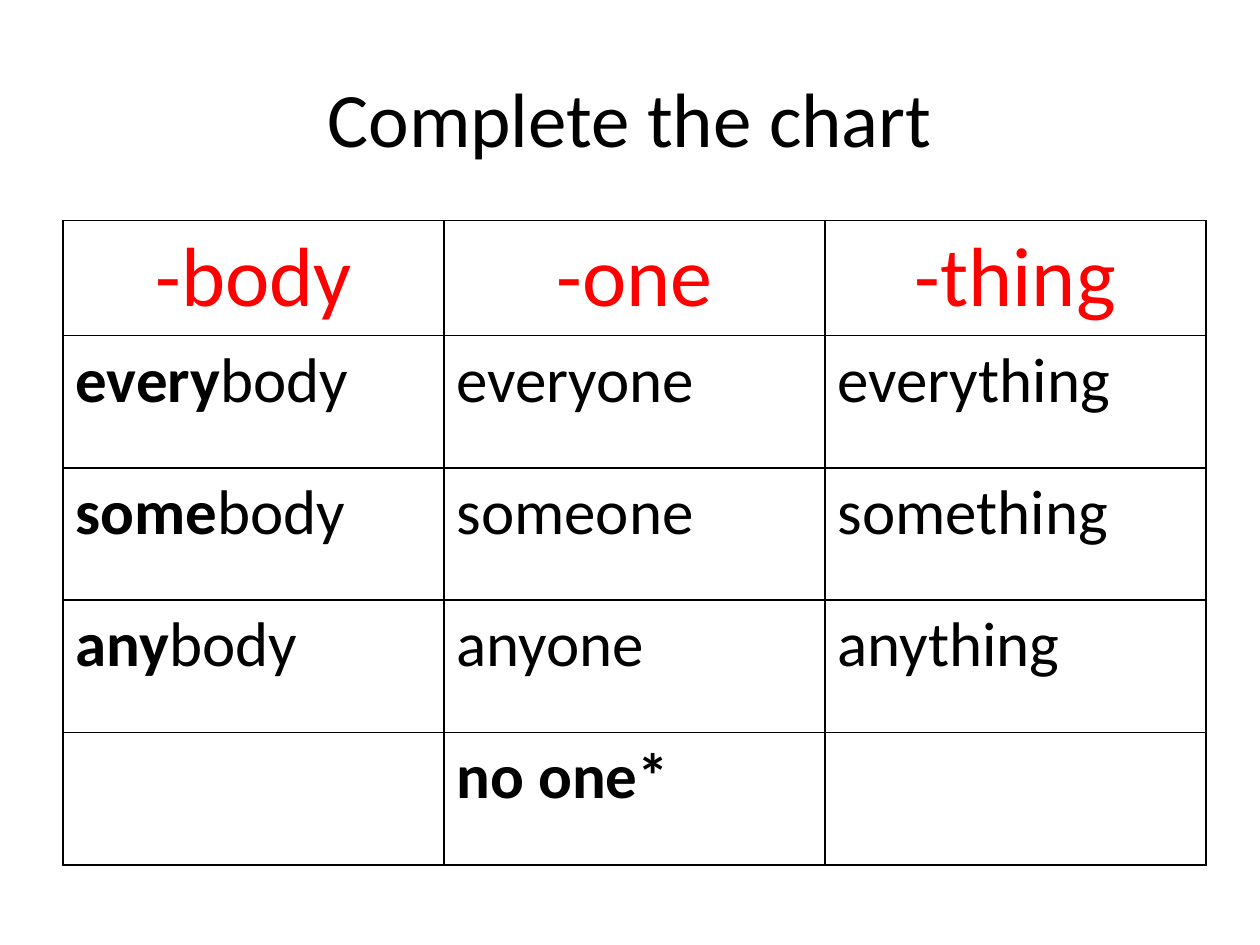
import pptx
import pptx.util
import pptx.dml.color
import pptx.enum.text
import pptx.oxml
import pptx.oxml.ns
from lxml import etree
from pptx.util import Inches

BLACK = pptx.dml.color.RGBColor(0, 0, 0)
RED = pptx.dml.color.RGBColor(255, 0, 0)
FONT = "Calibri"
CENTER = pptx.enum.text.PP_ALIGN.CENTER

HEADERS = ["-body", "-one", "-thing"]
# Each cell is a pair: bold beginning, regular ending
ROWS = [
    [("every", "body"), ("", "everyone"), ("", "everything")],
    [("some", "body"), ("", "someone"), ("", "something")],
    [("any", "body"), ("", "anyone"), ("", "anything")],
    [("", ""), ("no one*", ""), ("", "")],
]


def format_run(r, size, color, bold=False):
    r.font.name = FONT
    r.font.size = pptx.util.Pt(size)
    r.font.color.rgb = color
    r.font.bold = bold


def set_borders(cell):
    """Draw a thin black line on all four sides, under a clear fill."""
    tc_pr = cell._tc.get_or_add_tcPr()
    for side in ("a:lnL", "a:lnR", "a:lnT", "a:lnB"):
        ln = etree.SubElement(tc_pr, pptx.oxml.ns.qn(side), w=str(pptx.util.Pt(1)))
        fill = etree.SubElement(ln, pptx.oxml.ns.qn("a:solidFill"))
        etree.SubElement(fill, pptx.oxml.ns.qn("a:srgbClr"), val=str(BLACK))
    cell.fill.background()


def add_title(s, text, left, top, width, height):
    sp = s.shapes.title
    sp.left, sp.top, sp.width, sp.height = left, top, width, height
    tf = sp.text_frame
    tf.text = text
    tf.vertical_anchor = pptx.enum.text.MSO_ANCHOR.MIDDLE
    p = tf.paragraphs[0]
    p.alignment = CENTER
    format_run(p.runs[0], 44, BLACK)


def add_word_table(s, left, top, width, height, header_height):
    frame = s.shapes.add_table(len(ROWS) + 1, len(HEADERS), left, top, width, height)
    table = frame.table
    table.first_row = table.horz_banding = False

    # Header row, then equal rows below it
    table.rows[0].height = header_height
    for i in range(1, len(ROWS) + 1):
        table.rows[i].height = (height - header_height) // len(ROWS)
    for cell in table.iter_cells():
        set_borders(cell)

    # Endings
    for col, text in enumerate(HEADERS):
        p = table.cell(0, col).text_frame.paragraphs[0]
        p.alignment = CENTER
        r = p.add_run()
        r.text = text
        format_run(r, 48, RED)

    # Words
    for row, words in enumerate(ROWS, start=1):
        for col, (strong, plain) in enumerate(words):
            p = table.cell(row, col).text_frame.paragraphs[0]
            for text, bold in ((strong, True), (plain, False)):
                if text:
                    r = p.add_run()
                    r.text = text
                    format_run(r, 36, BLACK, bold)


def main():
    prs = pptx.Presentation()
    prs.slide_width, prs.slide_height = Inches(10), Inches(7.5)
    s = prs.slides.add_slide(prs.slide_layouts[5])
    add_title(s, "Complete the chart", Inches(0.5), Inches(0.3), Inches(9), Inches(1.25))
    add_word_table(s, Inches(0.5), Inches(1.75), Inches(9.07), Inches(5.1), Inches(0.9))
    prs.save("out.pptx")


if __name__ == "__main__":
    main()
